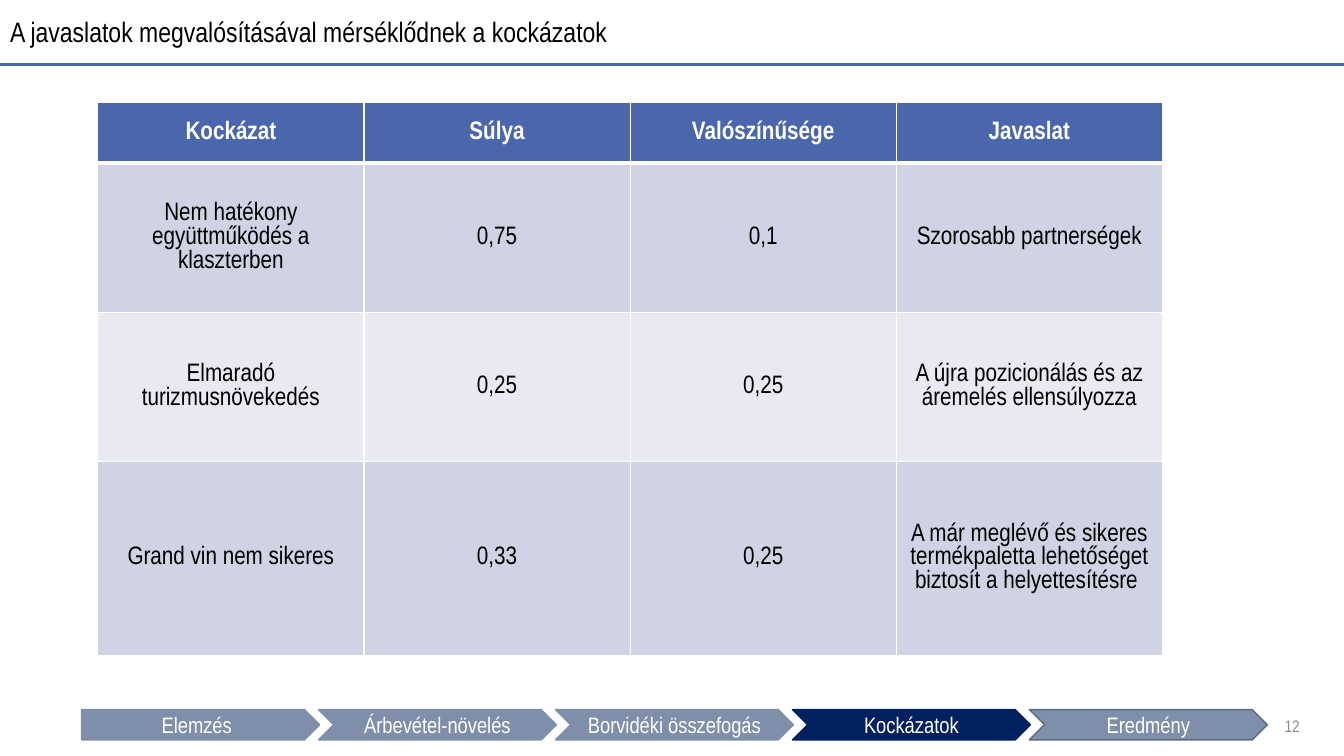
from lxml.etree import SubElement
from pptx import Presentation
from pptx.dml.color import RGBColor
from pptx.enum.shapes import MSO_CONNECTOR, MSO_SHAPE
from pptx.enum.text import MSO_ANCHOR, PP_ALIGN
from pptx.oxml.ns import qn
from pptx.util import Inches, Pt

BLUE = RGBColor(0x4A, 0x66, 0xAC)
NAVY = RGBColor(0x00, 0x20, 0x60)
SLATE = RGBColor(0x7F, 0x8F, 0xA9)
DARK_SLATE = RGBColor(0x5E, 0x6A, 0x7D)
LAVENDER = RGBColor(0xD0, 0xD3, 0xE3)
PALE = RGBColor(0xE9, 0xEA, 0xF1)
GRAY = RGBColor(0x8C, 0x8C, 0x8C)
BLACK = RGBColor(0x00, 0x00, 0x00)
WHITE = RGBColor(0xFF, 0xFF, 0xFF)

FONT = "Arial Narrow"
SLIDE_WIDTH, SLIDE_HEIGHT = Inches(13.33), Inches(7.5)
RULE_TOP = Inches(0.64)
COLUMN_WIDTH = Inches(2.64)
ROW_HEIGHTS = [Inches(height) for height in (0.6, 1.48, 1.48, 1.92)]
STEP_LEFT, STEP_TOP = Inches(0.81), Inches(7.04)
STEP_PITCH, STEP_WIDTH, STEP_HEIGHT = Inches(2.35), Inches(2.36), Inches(0.3)

RISKS = [
    ("Kockázat", "Súlya", "Valószínűsége", "Javaslat"),
    ("Nem hatékony együttműködés a klaszterben", "0,75", "0,1",
     "Szorosabb partnerségek"),
    ("Elmaradó turizmusnövekedés", "0,25", "0,25",
     "A újra pozicionálás és az áremelés ellensúlyozza"),
    ("Grand vin nem sikeres", "0,33", "0,25",
     "A már meglévő és sikeres termékpaletta lehetőséget biztosít a helyettesítésre "),
]
STEPS = [
    ("Elemzés", SLATE, SLATE),
    ("Árbevétel-növelés", SLATE, SLATE),
    ("Borvidéki összefogás", SLATE, SLATE),
    ("Kockázatok", NAVY, NAVY),
    ("Eredmény", SLATE, DARK_SLATE),
]


def apply(target, values):
    for attribute, value in values.items():
        setattr(target, attribute, value)


def write(frame, text, size, color, align=PP_ALIGN.CENTER, bold=False):
    frame.text = text
    paragraph = frame.paragraphs[0]
    paragraph.alignment = align
    font = paragraph.runs[0].font
    apply(font, {"name": FONT, "size": Pt(size), "bold": bold})
    font.color.rgb = color
    return paragraph


def add_heading(slide, text):
    title = slide.shapes.title
    apply(title, {"left": 0, "top": 0, "width": Inches(9.85), "height": Inches(0.67)})
    title.text_frame.vertical_anchor = MSO_ANCHOR.MIDDLE
    write(title.text_frame, text, 20, BLACK, PP_ALIGN.LEFT).line_spacing = 0.9
    rule = slide.shapes.add_connector(
        MSO_CONNECTOR.STRAIGHT, 0, RULE_TOP, SLIDE_WIDTH, RULE_TOP)
    rule.line.color.rgb = BLUE
    rule.line.width = Pt(1.5)
    SubElement(rule._element.spPr, qn("a:effectLst"))


def add_border(cell, side, width):
    border = SubElement(cell._tc.get_or_add_tcPr(), qn(f"a:ln{side}"), w=str(Pt(width)))
    fill = SubElement(border, qn("a:solidFill"))
    SubElement(fill, qn("a:srgbClr"), val=str(WHITE))


def format_cell(cell, text, row):
    header = row == 0
    bottom = 3 if header else 1
    top = 3 if row == 1 else 1
    for side, width in zip("LRTB", (1, 1, top, bottom)):
        add_border(cell, side, width)
    cell.fill.solid()
    cell.fill.fore_color.rgb = BLUE if header else LAVENDER if row % 2 else PALE
    cell.vertical_anchor = MSO_ANCHOR.MIDDLE
    write(cell.text_frame, text, 18, WHITE if header else BLACK, bold=header)


def add_risk_table(slide):
    columns = len(RISKS[0])
    table = slide.shapes.add_table(
        len(RISKS), columns, Inches(0.97), Inches(1.02),
        COLUMN_WIDTH * columns, sum(ROW_HEIGHTS)).table
    for column in table.columns:
        column.width = COLUMN_WIDTH
    for row, (height, texts) in enumerate(zip(ROW_HEIGHTS, RISKS)):
        table.rows[row].height = height
        for column, text in enumerate(texts):
            format_cell(table.cell(row, column), text, row)


def add_step(slide, index, label, fill, outline):
    outline_shape = MSO_SHAPE.CHEVRON if index else MSO_SHAPE.PENTAGON
    step = slide.shapes.add_shape(
        outline_shape, STEP_LEFT + index * STEP_PITCH, STEP_TOP, STEP_WIDTH, STEP_HEIGHT)
    step.shadow.inherit = False
    step.fill.solid()
    step.fill.fore_color.rgb = fill
    step.line.color.rgb = outline
    step.line.width = Pt(1)
    apply(step.text_frame, {"vertical_anchor": MSO_ANCHOR.MIDDLE, "word_wrap": True,
                            "margin_left": 0, "margin_right": 0})
    write(step.text_frame, label, 16, WHITE)


def add_page_number(slide, number):
    box = slide.shapes.add_textbox(Inches(12.57), Inches(7), Inches(0.42), Inches(0.4))
    apply(box.text_frame, {"vertical_anchor": MSO_ANCHOR.MIDDLE, "word_wrap": True})
    write(box.text_frame, number, 12, GRAY, PP_ALIGN.RIGHT)


def main():
    deck = Presentation()
    apply(deck, {"slide_width": SLIDE_WIDTH, "slide_height": SLIDE_HEIGHT})
    slide = deck.slides.add_slide(deck.slide_layouts[5])
    add_heading(slide, "A javaslatok megvalósításával mérséklődnek a kockázatok")
    add_page_number(slide, "12")
    add_risk_table(slide)
    for index, step in enumerate(STEPS):
        add_step(slide, index, *step)
    deck.save("out.pptx")


if __name__ == "__main__":
    main()
